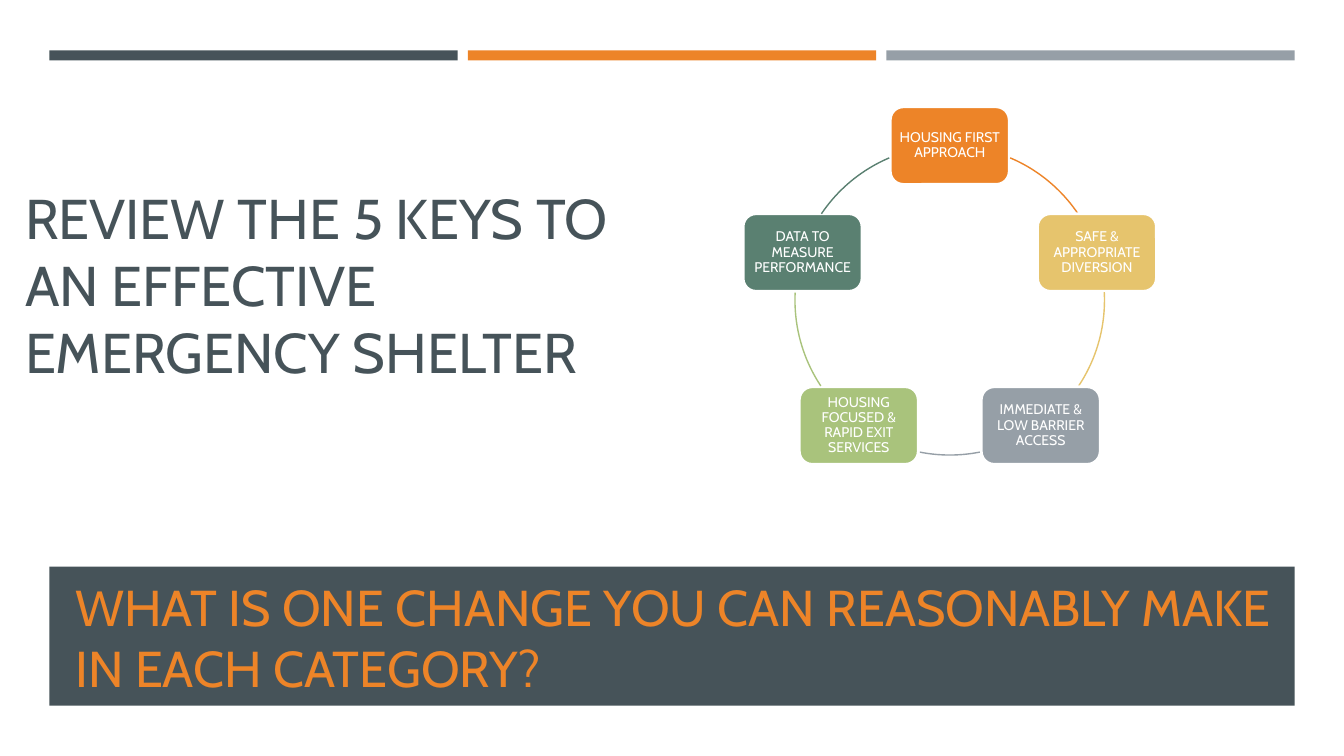
import math

from pptx import Presentation
from pptx.dml.color import RGBColor
from pptx.enum import shapes, text
from pptx.util import Inches, Pt

FONT = "Cabin"
SLATE, ORANGE, GRAY, WHITE = "465359", "ED8428", "969FA7", "FFFFFF"
CENTER_X, CENTER_Y, RADIUS = 9.42, 2.98, 1.535
NODE_WIDTH, NODE_HEIGHT = 1.18, 0.77

KEYS = [
    ("HOUSING FIRST APPROACH", ORANGE, 293, 326),
    ("SAFE & APPROPRIATE DIVERSION", "E6C46D", 357, 33.6),
    ("IMMEDIATE & LOW BARRIER ACCESS", GRAY, 78.8, 101.2),
    ("HOUSING FOCUSED & RAPID EXIT SERVICES", "A9C37C", 146.4, 183),
    ("DATA TO MEASURE PERFORMANCE", "5A8071", 214, 247),
]


def rgb(color):
    return RGBColor.from_string(color)


def add_block(slide, kind, left, top, width, height, color):
    shape = slide.shapes.add_shape(
        kind, Inches(left), Inches(top), Inches(width), Inches(height))
    shape.shadow.inherit = False
    shape.fill.solid()
    shape.fill.fore_color.rgb = rgb(color)
    shape.line.fill.background()
    return shape


def write(shape, wording, size, color, anchor):
    frame = shape.text_frame
    frame.word_wrap = True
    frame.vertical_anchor = anchor
    paragraph = frame.paragraphs[0]
    paragraph.text = wording
    paragraph.font.name = FONT
    paragraph.font.size = Pt(size)
    paragraph.font.color.rgb = rgb(color)
    return paragraph


def add_text(slide, wording, left, top, width, height, size, color, anchor):
    box = slide.shapes.add_textbox(
        Inches(left), Inches(top), Inches(width), Inches(height))
    write(box, wording, size, color, anchor)


def add_arc(slide, color, start, end):
    arc = slide.shapes.add_shape(
        shapes.MSO_SHAPE.ARC,
        Inches(CENTER_X - RADIUS), Inches(CENTER_Y - RADIUS),
        Inches(2 * RADIUS), Inches(2 * RADIUS))
    arc.shadow.inherit = False
    arc.fill.background()
    arc.line.color.rgb = rgb(color)
    arc.line.width = Pt(1)
    for index, angle in enumerate((start, end)):
        arc.adjustments[index] = angle * 60000 / 100000


def add_node(slide, wording, color, angle):
    left = CENTER_X + RADIUS * math.cos(angle) - NODE_WIDTH / 2
    top = CENTER_Y + RADIUS * math.sin(angle) - NODE_HEIGHT / 2
    node = add_block(slide, shapes.MSO_SHAPE.ROUNDED_RECTANGLE,
                     left, top, NODE_WIDTH, NODE_HEIGHT, color)
    node.line.color.rgb = rgb(WHITE)
    node.line.width = Pt(2)
    frame = node.text_frame
    frame.margin_left = frame.margin_right = Inches(0.04)
    frame.margin_top = frame.margin_bottom = Inches(0.04)
    paragraph = write(node, wording, 10, WHITE, text.MSO_ANCHOR.MIDDLE)
    paragraph.alignment = text.PP_ALIGN.CENTER
    paragraph.line_spacing = 0.9


def add_cycle(slide):
    for index, (wording, color, start, end) in enumerate(KEYS):
        angle = math.radians(-90 + index * 360 / len(KEYS))
        add_node(slide, wording, color, angle)
        add_arc(slide, color, start, end)


def main():
    presentation = Presentation()
    presentation.slide_width = Inches(13.33)
    presentation.slide_height = Inches(7.5)
    slide = presentation.slides.add_slide(presentation.slide_layouts[6])

    rectangle = shapes.MSO_SHAPE.RECTANGLE
    for index, color in enumerate((SLATE, ORANGE, GRAY)):
        add_block(slide, rectangle, 0.49 + 4.15 * index, 0.5, 4.05, 0.1, color)
    add_block(slide, rectangle, 0.49, 5.62, 12.35, 1.38, SLATE)

    add_text(slide, "REVIEW THE 5 KEYS TO AN EFFECTIVE EMERGENCY SHELTER",
             0.15, 1.06, 6.3, 2.81, 40, SLATE, text.MSO_ANCHOR.BOTTOM)
    add_text(slide, "WHAT IS ONE CHANGE YOU CAN REASONABLY MAKE IN EACH CATEGORY?",
             0.65, 5.67, 12.06, 0.66, 36, ORANGE, text.MSO_ANCHOR.TOP)
    add_cycle(slide)
    presentation.save("out.pptx")


if __name__ == "__main__":
    main()
